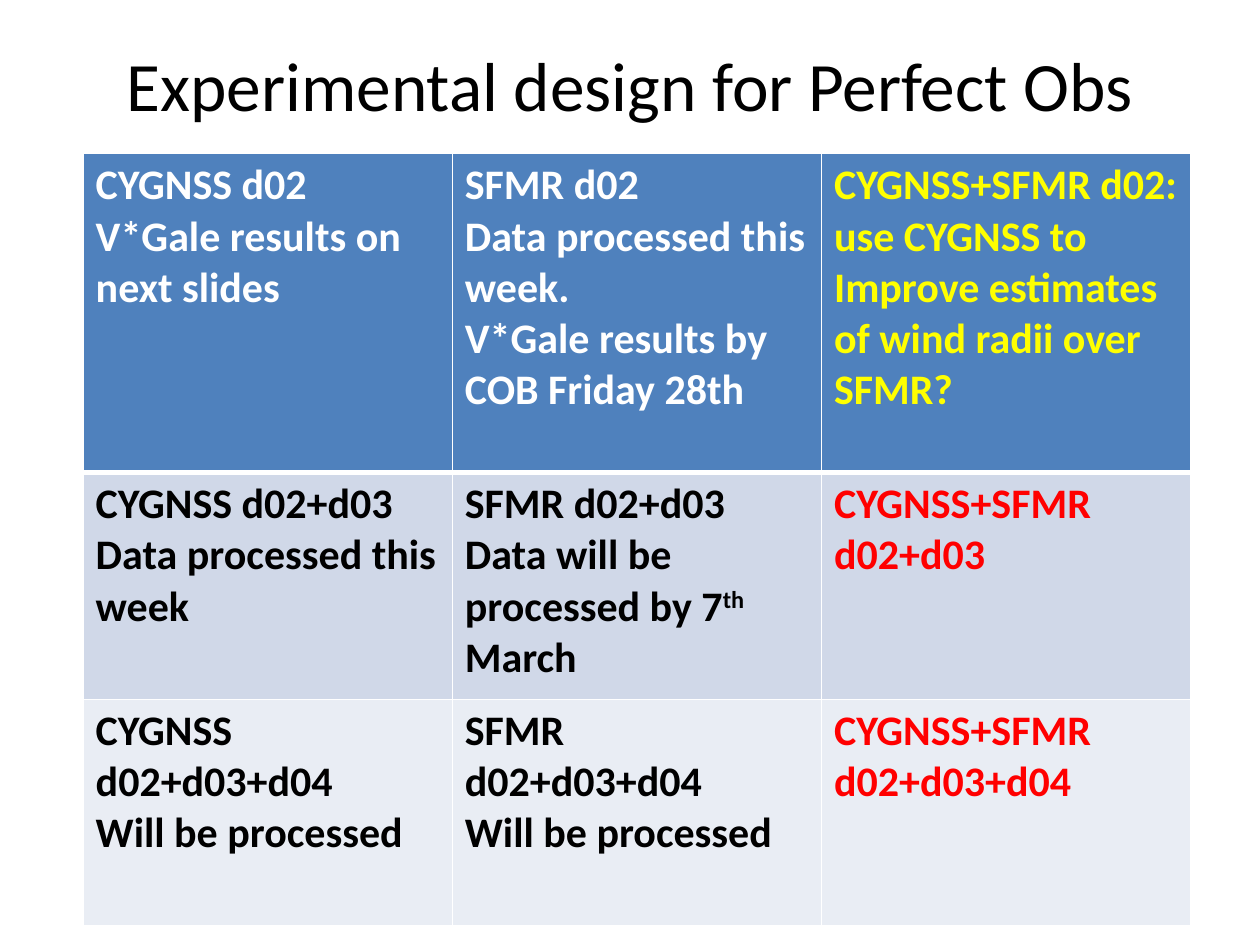
import pptx
import pptx.util
import pptx.oxml
import pptx.oxml.ns
import pptx.dml.color
import pptx.enum.text

Inches = pptx.util.Inches


def tint(code):
    return pptx.dml.color.RGBColor.from_string(code)


def style(para, size, color, bold):
    for run in para.runs:
        run.font.name = "Calibri"
        run.font.size = pptx.util.Pt(size)
        run.font.bold = bold
        run.font.color.rgb = tint(color)


deck = pptx.Presentation()
deck.slide_width = Inches(10)
deck.slide_height = Inches(7.5)
slide = deck.slides.add_slide(deck.slide_layouts[6])

title = slide.shapes.add_textbox(Inches(0.5), Inches(0.04), Inches(9), Inches(1.25))
frame = title.text_frame
frame.word_wrap = True
frame.vertical_anchor = pptx.enum.text.MSO_ANCHOR.MIDDLE
frame.text = "Experimental design for Perfect Obs"
frame.paragraphs[0].alignment = pptx.enum.text.PP_ALIGN.CENTER
style(frame.paragraphs[0], 39.6, "000000", False)

cells = [
    ["CYGNSS d02\nV*Gale results on next slides",
     "SFMR d02\nData processed this week.\nV*Gale results by COB Friday 28th",
     "CYGNSS+SFMR d02: use CYGNSS to Improve estimates of wind radii over SFMR?"],
    ["CYGNSS d02+d03\nData processed this week",
     "SFMR d02+d03\nData will be processed by 7",
     "CYGNSS+SFMR d02+d03"],
    ["CYGNSS d02+d03+d04\nWill be processed",
     "SFMR d02+d03+d04\nWill be processed",
     "CYGNSS+SFMR d02+d03+d04"],
]
highs = [2.53, 1.8, 1.8]
fills = ["4F81BD", "D0D8E8", "E9EDF4"]
inks = [("FFFFFF", "FFFF00"), ("000000", "FF0000"), ("000000", "FF0000")]

table = slide.shapes.add_table(
    3, 3, Inches(0.66), Inches(1.22), Inches(8.79), Inches(sum(highs))).table
for col in table.columns:
    col.width = Inches(2.93)

for r, row in enumerate(cells):
    table.rows[r].height = Inches(highs[r])
    for c, words in enumerate(row):
        cell = table.cell(r, c)
        cell.fill.solid()
        cell.fill.fore_color.rgb = tint(fills[r])
        props = cell._tc.get_or_add_tcPr()
        for i, side in enumerate("LRTB"):
            width = 3 if (r, side) in [(0, "B"), (1, "T")] else 1
            props.insert(i, pptx.oxml.parse_xml(
                f'<a:ln{side} {pptx.oxml.ns.nsdecls("a")} w="{pptx.util.Pt(width)}">'
                f'<a:solidFill><a:srgbClr val="FFFFFF"/></a:solidFill></a:ln{side}>'))
        cell.text_frame.text = words
        if (r, c) == (1, 1):
            date = cell.text_frame.paragraphs[1]
            raised = date.add_run()
            raised.text = "th"
            raised.font._element.set("baseline", "30000")
            date.add_run().text = " March"
        for para in cell.text_frame.paragraphs:
            style(para, 24, inks[r][c == 2], True)

deck.save("out.pptx")
